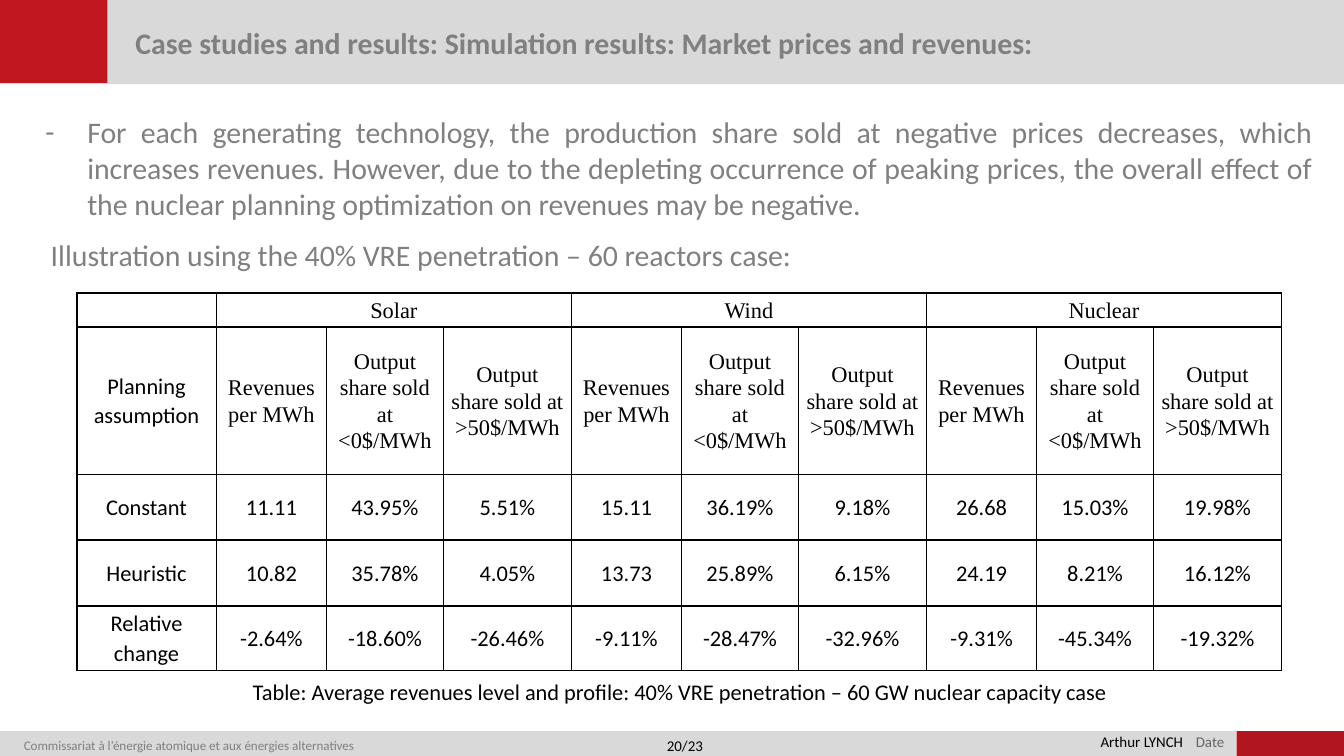
from lxml import etree
from pptx import Presentation
from pptx.dml.color import RGBColor
from pptx.enum.shapes import MSO_SHAPE
from pptx.enum.text import MSO_ANCHOR, PP_ALIGN
from pptx.oxml import parse_xml
from pptx.oxml.ns import nsdecls, qn
from pptx.util import Cm, Pt

RECTANGLE = MSO_SHAPE.RECTANGLE
MIDDLE = MSO_ANCHOR.MIDDLE
LEFT, CENTER = PP_ALIGN.LEFT, PP_ALIGN.CENTER
RIGHT, JUSTIFY = PP_ALIGN.RIGHT, PP_ALIGN.JUSTIFY

SANS, SERIF = "Calibri", "Times New Roman"
BLACK, GRAY, DATE_GRAY = "000000", "808080", "666666"

BARS = [
    (0, 13.82, 23.37, 0.47, "D9D9D9"),
    (0, 0, 25.4, 1.59, "D9D9D9"),
    (23.37, 13.82, 2.03, 0.47, "B1151F"),
    (0, 0, 2.03, 1.57, "C11720"),
]

TITLE = "Case studies and results: Simulation results: Market prices and revenues:"
FINDING = (
    "For each generating technology, the production share sold at negative prices "
    "decreases, which increases revenues. However, due to the depleting occurrence of "
    "peaking prices, the overall effect of the nuclear planning optimization on "
    "revenues may be negative."
)
LEAD_IN = "Illustration using the 40% VRE penetration – 60 reactors case:"
CAPTION = ("Table: Average revenues level and profile: "
           "40% VRE penetration – 60 GW nuclear capacity case")
INSTITUTION = "Commissariat à l’énergie atomique et aux énergies alternatives"

TEXTS = [
    (20.09, 13.77, 3.3, 0.56, "Date", 8, DATE_GRAY, RIGHT, 0.9),
    (0.2, 13.69, 7.14, 0.66, INSTITUTION, 7, GRAY, LEFT, 1.4),
    (20.55, 13.72, 2.57, 0.61, "Arthur LYNCH", 8, BLACK, LEFT, 1.0),
    (11.66, 13.79, 2.57, 0.61, "20/23", 8, BLACK, CENTER, 1.0),
    (0.71, 4.34, 24.46, 0.94, LEAD_IN, 16, GRAY, JUSTIFY, 1.0),
    (3.1, 12.7, 19.51, 0.76, CAPTION, 12, BLACK, CENTER, 1.0),
]

TECHNOLOGIES = ["Solar", "Wind", "Nuclear"]
MEASURES = ["Revenues per MWh", "Output share sold at <0$/MWh",
            "Output share sold at >50$/MWh"]
RESULTS = [
    ["Constant", "11.11", "43.95%", "5.51%", "15.11", "36.19%", "9.18%",
     "26.68", "15.03%", "19.98%"],
    ["Heuristic", "10.82", "35.78%", "4.05%", "13.73", "25.89%", "6.15%",
     "24.19", "8.21%", "16.12%"],
    ["Relative change", "-2.64%", "-18.60%", "-26.46%", "-9.11%", "-28.47%", "-32.96%",
     "-9.31%", "-45.34%", "-19.32%"],
]
LABEL_WIDTH = 2.64
MEASURE_WIDTHS = [2.08, 2.21, 2.42]
ROW_HEIGHTS = [0.64, 2.79, 1.24, 1.24, 1.22]
TABLE_LEFT, TABLE_TOP = 1.45, 5.54


def color(value):
    return RGBColor.from_string(value)


def format_paragraph(paragraph, size, value, align, spacing, name=SANS, bold=False):
    paragraph.alignment = align
    paragraph.line_spacing = spacing
    for run in paragraph.runs:
        run.font.name = name
        run.font.size = Pt(size)
        run.font.bold = bold
        run.font.color.rgb = color(value)


def add_bar(slide, left, top, width, height, fill):
    shape = slide.shapes.add_shape(RECTANGLE, Cm(left), Cm(top), Cm(width), Cm(height))
    shape.shadow.inherit = False
    shape.fill.solid()
    shape.fill.fore_color.rgb = color(fill)
    shape.line.fill.background()


def add_text(slide, left, top, width, height, text, size, value, align, spacing, bold=False):
    box = slide.shapes.add_textbox(Cm(left), Cm(top), Cm(width), Cm(height))
    text_frame = box.text_frame
    text_frame.word_wrap = True
    text_frame.text = text
    format_paragraph(text_frame.paragraphs[0], size, value, align, spacing, bold=bold)
    return text_frame


def add_dash(paragraph):
    properties = paragraph._p.get_or_add_pPr()
    properties.set("marL", str(Cm(0.79)))
    properties.set("indent", str(Cm(-0.79)))
    etree.SubElement(properties, qn("a:buFont")).set("typeface", SANS)
    etree.SubElement(properties, qn("a:buChar")).set("char", "-")


def add_borders(cell):
    properties = cell._tc.get_or_add_tcPr()
    for position, side in enumerate(("lnL", "lnR", "lnT", "lnB")):
        properties.insert(position, parse_xml(
            f'<a:{side} {nsdecls("a")} w="{Pt(1)}"><a:solidFill>'
            f'<a:srgbClr val="{BLACK}"/></a:solidFill></a:{side}>'))


def fill_cell(cell, text, name):
    cell.fill.background()
    add_borders(cell)
    cell.vertical_anchor = MIDDLE
    cell.margin_left = cell.margin_right = Cm(0.13)
    cell.margin_top = cell.margin_bottom = 0
    cell.text_frame.text = text
    paragraph = cell.text_frame.paragraphs[0]
    format_paragraph(paragraph, 12, BLACK, CENTER, 1.07, name)
    if not text:
        paragraph._p.get_or_add_endParaRPr().set("sz", "1200")


def add_results_table(slide):
    span = len(MEASURES)
    heading = [""]
    for technology in TECHNOLOGIES:
        heading += [technology] + [""] * (span - 1)
    rows = [heading, ["Planning assumption"] + MEASURES * len(TECHNOLOGIES)] + RESULTS
    widths = [LABEL_WIDTH] + MEASURE_WIDTHS * len(TECHNOLOGIES)
    table = slide.shapes.add_table(
        len(rows), len(widths), Cm(TABLE_LEFT), Cm(TABLE_TOP),
        Cm(sum(widths)), Cm(sum(ROW_HEIGHTS))).table
    table.first_row = table.horz_banding = False
    for column, width in zip(table.columns, widths):
        column.width = Cm(width)
    for row, height in zip(table.rows, ROW_HEIGHTS):
        row.height = Cm(height)
    for row_index, row in enumerate(rows):
        for column_index, text in enumerate(row):
            name = SERIF if row_index < 2 and column_index > 0 else SANS
            fill_cell(table.cell(row_index, column_index), text, name)
    for first in range(1, len(widths), span):
        table.cell(0, first).merge(table.cell(0, first + span - 1))


def main():
    presentation = Presentation()
    presentation.slide_width, presentation.slide_height = Cm(25.4), Cm(14.29)
    slide = presentation.slides.add_slide(presentation.slide_layouts[6])
    for bar in BARS:
        add_bar(slide, *bar)
    title = add_text(slide, 2.31, 0.36, 19.41, 0.89, TITLE, 16, GRAY, LEFT, 1.0, bold=True)
    title.vertical_anchor = MIDDLE
    title.margin_top = title.margin_bottom = Cm(0.1)
    finding = add_text(slide, 0.61, 2.03, 24.46, 2.31, FINDING, 16, GRAY, JUSTIFY, 1.0)
    add_dash(finding.paragraphs[0])
    for text in TEXTS:
        add_text(slide, *text)
    add_results_table(slide)
    presentation.save("out.pptx")


if __name__ == "__main__":
    main()
